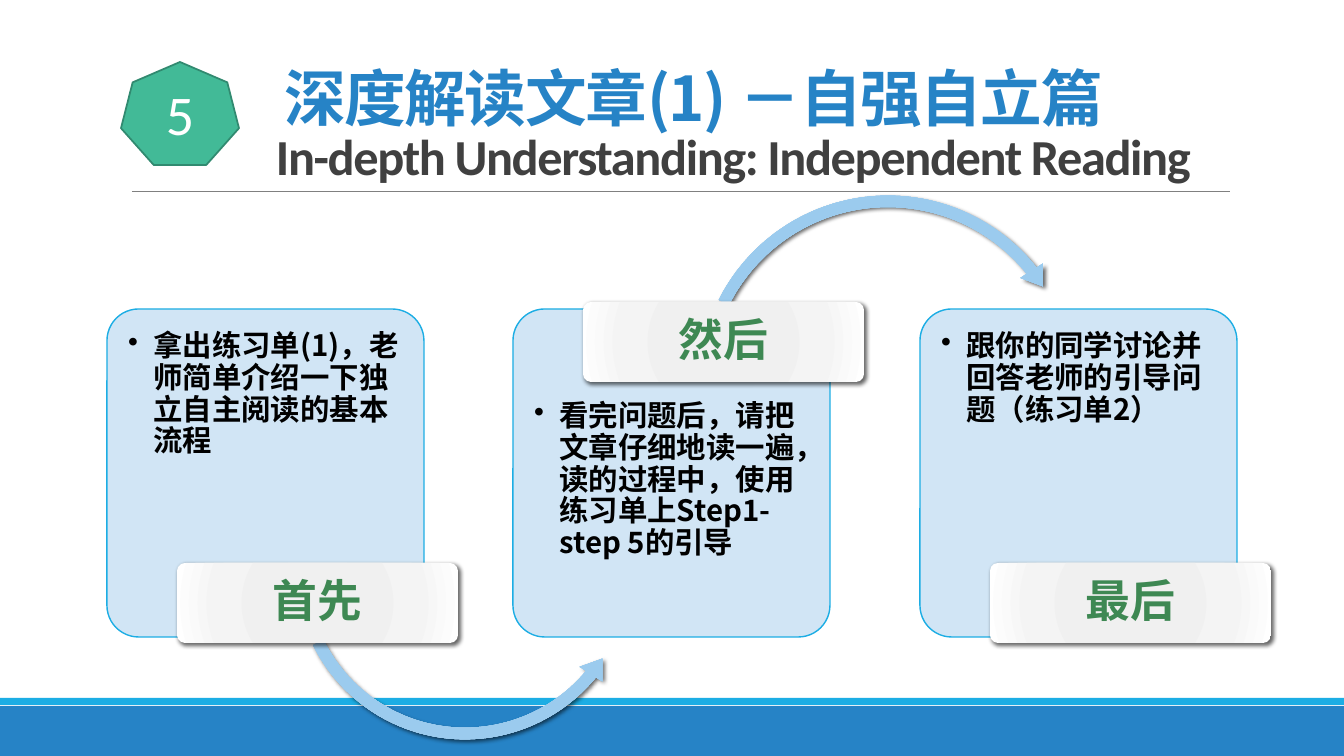
from lxml.etree import SubElement
from pptx import Presentation
from pptx.dml.color import RGBColor
from pptx.enum.shapes import MSO_CONNECTOR, MSO_SHAPE
from pptx.enum.text import MSO_ANCHOR, MSO_AUTO_SIZE, PP_ALIGN
from pptx.oxml import parse_xml
from pptx.oxml.ns import nsdecls, qn
from pptx.util import Pt

PX = 914400 / 100.8
CJK_FONT = "Noto Sans CJK SC"
ARROW_STOPS = ["97C6E8", "9AC8E9", "9BCBEE", "A9D3F3"]
LABEL_STOPS = ["EEEEEE", "F0F0F0", "F4F4F4", "FFFFFF"]


def add_box(kind, box, fill, line=None, line_width=1, adjustments=()):
    shape = slide.shapes.add_shape(kind, *[round(value * PX) for value in box])
    for index, value in enumerate(adjustments):
        shape.adjustments[index] = value
    shape.shadow.inherit = False
    if line:
        shape.line.color.rgb = RGBColor.from_string(line)
        shape.line.width = Pt(line_width)
    else:
        shape.line.fill.background()
    if isinstance(fill, str):
        shape.fill.solid()
        shape.fill.fore_color.rgb = RGBColor.from_string(fill)
        return shape
    stops = "".join(
        f'<a:gs pos="{position}000"><a:srgbClr val="{color}"/></a:gs>'
        for position, color in zip((0, 34, 70, 100), fill))
    properties = shape.fill._xPr
    properties.insert(2, parse_xml(
        f'<a:gradFill {nsdecls("a")} rotWithShape="1"><a:gsLst>{stops}</a:gsLst>'
        '<a:path path="circle"><a:fillToRect l="100000" t="100000" r="100000" b="100000"/>'
        '</a:path></a:gradFill>'))
    properties.find(qn("a:effectLst")).append(parse_xml(
        f'<a:outerShdw {nsdecls("a")} blurRad="38100" dist="25400" dir="2700000" rotWithShape="0">'
        '<a:srgbClr val="000000"><a:alpha val="60000"/></a:srgbClr></a:outerShdw>'))
    return shape


def format_paragraph(paragraph, size, font, color, bold, alignment, spacing):
    paragraph.alignment = alignment
    paragraph.line_spacing = spacing
    paragraph.font.size = Pt(size)
    paragraph.font.name = font
    paragraph.font.bold = bold
    paragraph.font.color.rgb = RGBColor.from_string(color)
    SubElement(paragraph.font._rPr, qn("a:ea"), typeface=CJK_FONT)


presentation = Presentation()
presentation.slide_width = round(1344 * PX)
presentation.slide_height = round(756 * PX)
slide = presentation.slides.add_slide(presentation.slide_layouts[5])

add_box(MSO_SHAPE.RECTANGLE, (0, 706, 1344, 50), "2683C6")
add_box(MSO_SHAPE.RECTANGLE, (0, 698, 1344, 7), "1CADE4")
rule = slide.shapes.add_connector(
    MSO_CONNECTOR.STRAIGHT, *[round(value * PX) for value in (132, 191, 1230, 191)])
rule.line.color.rgb = RGBColor.from_string("808080")
rule.line.width = Pt(0.5)
SubElement(rule._element.spPr, qn("a:effectLst"))

title = slide.shapes.title
title.left, title.top, title.width, title.height = [
    round(value * PX) for value in (121, 31, 1109, 160)]
title_frame = title.text_frame
title_frame.auto_size = MSO_AUTO_SIZE.NONE
title_frame.vertical_anchor = MSO_ANCHOR.BOTTOM
title_frame.text = "深度解读文章(1) －自强自立篇\nIn-depth Understanding: Independent Reading"
title_styles = [(44, CJK_FONT, "2683C6", 36), (36, "Calibri", "404040", 116)]
for paragraph, (size, font, color, indent) in zip(title_frame.paragraphs, title_styles):
    format_paragraph(paragraph, size, font, color, True, PP_ALIGN.CENTER, 0.85)
    paragraph._p.get_or_add_pPr().set("marL", str(round(indent * PX)))
    for run in paragraph.runs:
        run.font._element.set("spc", "-100")

badge = add_box(MSO_SHAPE.HEPTAGON, (121, 62, 118, 103), "42BA97", "318A70", 1.25)
badge.text_frame.text = "5"
badge.text_frame.vertical_anchor = MSO_ANCHOR.MIDDLE
format_paragraph(badge.text_frame.paragraphs[0], 40, "Calibri", "FFFFFF", False,
                 PP_ALIGN.CENTER, 1.0)

steps = [
    (107, "首先", "拿出练习单(1)，老师简单介绍一下独立自主阅读的基本流程", 13, 563,
     (MSO_SHAPE.LEFT_CIRCULAR_ARROW, (288, 393, 354, 354), (0.033, 4.04, 23.738, 92.188, 0.038))),
    (513, "然后", "看完问题后，请把文章仔细地读一遍，读的过程中，使用练习单上Step1-step 5的引导", 83, 302,
     (MSO_SHAPE.CIRCULAR_ARROW, (691, 188, 394, 394), (0.029, 3.597, 192.917, 124.025, 0.034))),
    (920, "最后", "跟你的同学讨论并回答老师的引导问题（练习单2）", 13, 563, None),
]
for left, name, instruction, text_top, label_top, arrow in steps:
    card = add_box(MSO_SHAPE.ROUNDED_RECTANGLE, (left, 309, 317, 328), "CDE3F5", "1CADE4",
                   adjustments=[0.1])
    SubElement(card.fill._xPr.find(qn("a:solidFill"))[0], qn("a:alpha"), val="90000")
    card_frame = card.text_frame
    card_frame.word_wrap = True
    card_frame.vertical_anchor = MSO_ANCHOR.TOP
    card_frame.margin_left, card_frame.margin_top, card_frame.margin_right = [
        round(value * PX) for value in (12, text_top, 14)]
    card_frame.text = instruction
    paragraph = card_frame.paragraphs[0]
    format_paragraph(paragraph, 21, CJK_FONT, "000000", True, PP_ALIGN.LEFT, 0.9)
    paragraph_properties = paragraph._p.get_or_add_pPr()
    paragraph_properties.set("marL", "228600")
    paragraph_properties.set("indent", "-228600")
    bullet = parse_xml(f'<a:buChar {nsdecls("a")} char="•"/>')
    paragraph_properties.find(qn("a:defRPr")).addprevious(bullet)

    if arrow:
        arrow_kind, arrow_box, arrow_adjustments = arrow
        add_box(arrow_kind, arrow_box, ARROW_STOPS, adjustments=arrow_adjustments)

    label = add_box(MSO_SHAPE.ROUNDED_RECTANGLE, (left + 70, label_top, 281, 80), LABEL_STOPS,
                    adjustments=[0.1])
    label.text_frame.text = name
    label.text_frame.vertical_anchor = MSO_ANCHOR.MIDDLE
    format_paragraph(label.text_frame.paragraphs[0], 32, "Calibri", "3E8853", True,
                     PP_ALIGN.CENTER, 0.9)

presentation.save("out.pptx")
